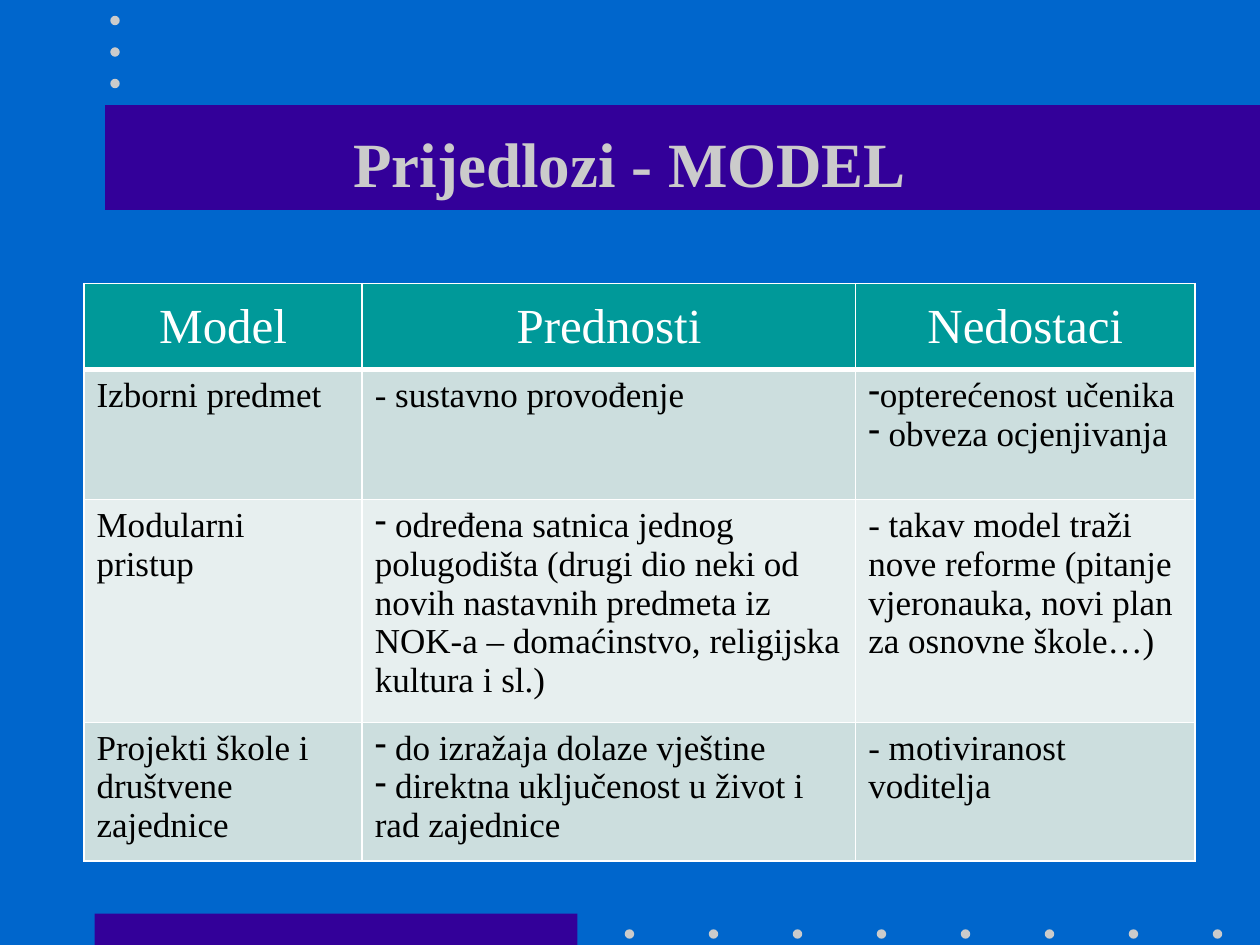
"""Build a slide with a table comparing three teaching models."""
from lxml import etree
from pptx import Presentation
from pptx.dml.color import RGBColor
from pptx.enum.shapes import MSO_SHAPE
from pptx.enum.text import MSO_ANCHOR, PP_ALIGN
from pptx.oxml.ns import qn
from pptx.util import Inches, Pt

RECTANGLE, OVAL = MSO_SHAPE.RECTANGLE, MSO_SHAPE.OVAL
CENTER, LEFT = PP_ALIGN.CENTER, PP_ALIGN.LEFT
MIDDLE, TOP = MSO_ANCHOR.MIDDLE, MSO_ANCHOR.TOP

BLUE = RGBColor(0x00, 0x66, 0xCC)
PURPLE = RGBColor(0x33, 0x00, 0x99)
SILVER = RGBColor(0xCB, 0xCB, 0xCB)
TEAL = RGBColor(0x00, 0x99, 0x99)
WHITE = RGBColor(0xFF, 0xFF, 0xFF)
BLACK = RGBColor(0x00, 0x00, 0x00)
BANDS = RGBColor(0xCC, 0xDE, 0xDE), RGBColor(0xE7, 0xEF, 0xEF)

SLIDE_WIDTH, SLIDE_HEIGHT = Inches(10), Inches(7.5)
GRID_COLUMNS = 120
DOT_SIZE = 0.9
COLUMN_WIDTHS = 26.5, 47, 32.3
ROW_HEIGHTS = 8.2, 12.4, 19.7, 12.3

FONT = "Times New Roman"
TITLE_FORMAT = {"name": FONT, "size": Pt(36), "bold": True}
HEADER_FORMAT = {"name": FONT, "size": Pt(28), "bold": False}
BODY_FORMAT = {"name": FONT, "size": Pt(20), "bold": False}

HEADERS = "Model", "Prednosti", "Nedostaci"
BULLET = "•"
MODELS = (
    ("Izborni predmet",
     "- sustavno provođenje",
     "•opterećenost učenika\n• obveza ocjenjivanja"),
    ("Modularni pristup",
     "• određena satnica jednog polugodišta (drugi dio neki od novih "
     "nastavnih predmeta iz NOK-a – domaćinstvo, religijska kultura i sl.)",
     "- takav model traži nove reforme (pitanje vjeronauka, novi plan za "
     "osnovne škole…)"),
    ("Projekti škole i društvene zajednice",
     "• do izražaja dolaze vještine\n"
     "• direktna uključenost u život i rad zajednice",
     "- motiviranost voditelja"),
)


def grid(units):
    """Turn grid units into a slide length."""
    return round(SLIDE_WIDTH * units / GRID_COLUMNS)


def add_block(slide, kind, color, *box):
    """Add a plain filled shape at a box given in grid units."""
    shape = slide.shapes.add_shape(kind, *map(grid, box))
    shape.shadow.inherit = False
    shape.fill.solid()
    shape.fill.fore_color.rgb = color
    shape.line.fill.background()


def add_dots(slide, count, left, top, step_across, step_down):
    """Add an evenly spaced line of dots."""
    for index in range(count):
        add_block(slide, OVAL, SILVER, left + index * step_across,
                  top + index * step_down, DOT_SIZE, DOT_SIZE)


def add_dash_bullet(paragraph):
    """Give a paragraph a dash as its bullet, without an indent."""
    properties = paragraph._p.get_or_add_pPr()
    properties.set("marL", "0")
    properties.set("indent", "0")
    etree.SubElement(properties, qn("a:buFontTx"))
    etree.SubElement(properties, qn("a:buChar"), char="-")


def write_text(frame, text, font_format, color, alignment):
    """Write one paragraph per line, with dash bullets where marked."""
    frame.word_wrap = True
    for index, line in enumerate(text.split("\n")):
        paragraph = frame.add_paragraph() if index else frame.paragraphs[0]
        paragraph.alignment = alignment
        if line.startswith(BULLET):
            add_dash_bullet(paragraph)
        run = paragraph.add_run()
        run.text = line.removeprefix(BULLET)
        for name, value in font_format.items():
            setattr(run.font, name, value)
        run.font.color.rgb = color


def add_title(slide, text):
    """Add the centred slide title."""
    frame = slide.shapes.add_textbox(*map(grid, (9, 8, 102, 15))).text_frame
    frame.vertical_anchor = MIDDLE
    write_text(frame, text, TITLE_FORMAT, SILVER, CENTER)


def set_borders(cell, top_width, bottom_width):
    """Draw white borders around a cell."""
    properties = cell._tc.get_or_add_tcPr()
    widths = {"lnL": 1, "lnR": 1, "lnT": top_width, "lnB": bottom_width}
    for position, (side, width) in enumerate(widths.items()):
        line = etree.Element(qn(f"a:{side}"), w=str(Pt(width)))
        fill = etree.SubElement(line, qn("a:solidFill"))
        etree.SubElement(fill, qn("a:srgbClr"), val=str(WHITE))
        properties.insert(position, line)


def fill_row(table, row, texts, anchor, color, *text_style):
    """Fill and format the cells of one table row."""
    for column, text in enumerate(texts):
        cell = table.cell(row, column)
        cell.vertical_anchor = anchor
        cell.fill.solid()
        cell.fill.fore_color.rgb = color
        set_borders(cell, 3 if row == 1 else 1, 3 if row == 0 else 1)
        write_text(cell.text_frame, text, *text_style)


def add_model_table(slide):
    """Add the table of models with their advantages and drawbacks."""
    table = slide.shapes.add_table(
        len(ROW_HEIGHTS), len(COLUMN_WIDTHS), grid(8), grid(27),
        grid(sum(COLUMN_WIDTHS)), grid(sum(ROW_HEIGHTS))).table
    for column, width in zip(table.columns, COLUMN_WIDTHS):
        column.width = grid(width)
    for row, height in zip(table.rows, ROW_HEIGHTS):
        row.height = grid(height)
    fill_row(table, 0, HEADERS, MIDDLE, TEAL, HEADER_FORMAT, WHITE, CENTER)
    for row, texts in enumerate(MODELS, start=1):
        band = BANDS[(row - 1) % len(BANDS)]
        fill_row(table, row, texts, TOP, band, BODY_FORMAT, BLACK, LEFT)


def main():
    """Build and save the presentation."""
    presentation = Presentation()
    presentation.slide_width = SLIDE_WIDTH
    presentation.slide_height = SLIDE_HEIGHT
    slide = presentation.slides.add_slide(presentation.slide_layouts[6])
    slide.background.fill.solid()
    slide.background.fill.fore_color.rgb = BLUE
    add_block(slide, RECTANGLE, PURPLE, 9, 87, 46, 3)
    add_dots(slide, 8, 59.5, 88.5, 8, 0)
    add_block(slide, RECTANGLE, PURPLE, 10, 10, 110, 10)
    add_dots(slide, 3, 10.5, 1.5, 0, 3)
    add_title(slide, "Prijedlozi - MODEL")
    add_model_table(slide)
    presentation.save("out.pptx")


if __name__ == "__main__":
    main()
